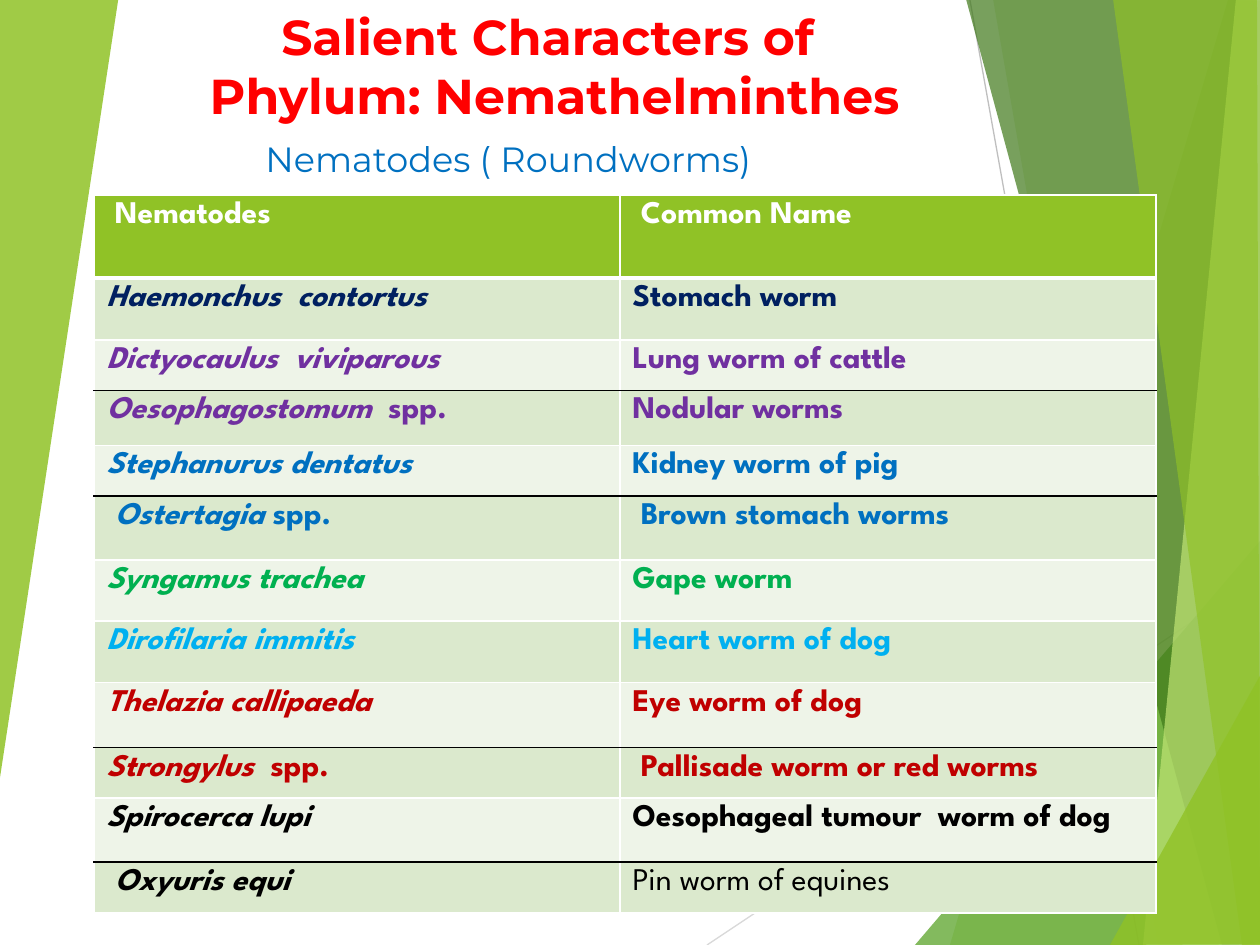
from lxml import etree
from pptx import Presentation
from pptx.dml.color import RGBColor
from pptx.enum.shapes import MSO_CONNECTOR
from pptx.enum.text import MSO_ANCHOR, MSO_AUTO_SIZE, PP_ALIGN
from pptx.oxml.ns import qn
from pptx.util import Emu, Pt

STRAIGHT = MSO_CONNECTOR.STRAIGHT
TOP, MIDDLE = MSO_ANCHOR.TOP, MSO_ANCHOR.MIDDLE
GROW = MSO_AUTO_SIZE.SHAPE_TO_FIT_TEXT
LEFT, CENTER = PP_ALIGN.LEFT, PP_ALIGN.CENTER

PX = 914400 / 126
WIDTH, HEIGHT = 1260, 945
HEADING_FONT, TABLE_FONT = "Montserrat", "League Spartan"

WHITE = RGBColor(0xFF, 0xFF, 0xFF)
BLACK = RGBColor(0x00, 0x00, 0x00)
RED = RGBColor(0xFF, 0x00, 0x00)
DARK_RED = RGBColor(0xC0, 0x00, 0x00)
NAVY = RGBColor(0x00, 0x20, 0x60)
PURPLE = RGBColor(0x70, 0x30, 0xA0)
BLUE = RGBColor(0x00, 0x70, 0xC0)
SKY = RGBColor(0x00, 0xB0, 0xF0)
GREEN = RGBColor(0x00, 0xB0, 0x50)
LIME = RGBColor(0x90, 0xC2, 0x26)
LEAF = RGBColor(0x54, 0xA0, 0x21)
FOREST = RGBColor(0x3F, 0x78, 0x19)
PALE_LIME = RGBColor(0xC0, 0xE4, 0x74)
BAND_DARK = RGBColor(0xDB, 0xE9, 0xCD)
BAND_LIGHT = RGBColor(0xEE, 0xF4, 0xE8)
LIGHT_GREY = RGBColor(0xD9, 0xD9, 0xD9)
GREY = RGBColor(0xBF, 0xBF, 0xBF)

LINES = [
    ((707, 945), (1261, 576), LIGHT_GREY),
    ((970, 0), (1139, 945), GREY),
]

FACETS = [
    ([(1228, 0), (950, 945), (1262, 946), (1261, 1)], LIME, 30),
    ([(993, -1), (1158, 945), (1261, 945), (1261, -1)], LIME, 20),
    ([(915, 945), (1260, 541), (1261, 945)], LEAF, 72),
    ([(966, -1), (1222, 945), (1261, 944), (1261, -1)], FOREST, 70),
    ([(1236, -1), (1143, 945), (1261, 945), (1260, -1)], PALE_LIME, 70),
    ([(1113, -1), (1242, 945), (1260, 945), (1257, -1)], LIME, 65),
    ([(1110, 945), (1261, 674), (1261, 944)], LIME, 80),
    ([(-1, 0), (118, -1), (118, 1), (-1, 784)], LIME, 85),
]

COLUMNS = [526, 536]
HEADER = (" Nematodes", "", " Common Name", WHITE, 83)
WORMS = [
    ("Haemonchus  contortus", "", "Stomach worm", NAVY, 62),
    ("Dictyocaulus  viviparous", "", "Lung worm of cattle", PURPLE, 50),
    ("Oesophagostomum  ", "spp.", "Nodular worms", PURPLE, 55),
    ("Stephanurus dentatus", "", "Kidney worm of pig", BLUE, 50),
    (" Ostertagia ", "spp.", " Brown stomach worms", BLUE, 64),
    ("Syngamus trachea", "", "Gape worm", GREEN, 61),
    ("Dirofilaria immitis", "", "Heart worm of dog", SKY, 62),
    ("Thelazia callipaeda", "", "Eye worm of dog", DARK_RED, 65),
    ("Strongylus  ", "spp.", " Pallisade worm or red worms", DARK_RED, 50),
    ("Spirocerca lupi", "", "Oesophageal tumour  worm of dog", BLACK, 64),
    (" Oxyuris equi", "", "Pin worm of equines", BLACK, 51),
]
RULED_ROWS = {2, 4, 8, 10}


def px(n):
    """Turn pixels into EMU."""
    return Emu(round(n * PX))


def write(p, text, *, font, size, color, bold=False, italic=False, align=LEFT):
    """Add one formatted run to a paragraph."""
    p.alignment = align
    r = p.add_run()
    r.text = text
    r.font.name = font
    r.font.size = Pt(size)
    r.font.color.rgb = color
    r.font.bold = bold
    r.font.italic = italic


class Deck:
    """Hold the style and the current slide."""

    def __init__(self, prs):
        """Start a title-only slide."""
        self.slide = prs.slides.add_slide(prs.slide_layouts[5])
        self.shapes = self.slide.shapes

    def line(self, start, end, color):
        """Draw a thin straight line."""
        c = self.shapes.add_connector(STRAIGHT, *map(px, start + end))
        c.line.color.rgb = color
        c.line.width = Pt(0.75)
        etree.SubElement(c._element.spPr, qn("a:effectLst"))

    def facet(self, points, color, opacity):
        """Draw a translucent polygon."""
        builder = self.shapes.build_freeform(*points[0], scale=PX)
        builder.add_line_segments(points[1:], close=True)
        sp = builder.convert_to_shape()
        sp.shadow.inherit = False
        sp.line.fill.background()
        sp.fill.solid()
        sp.fill.fore_color.rgb = color
        rgb = sp._element.spPr.find(".//" + qn("a:srgbClr"))
        etree.SubElement(rgb, qn("a:alpha"), val=str(opacity * 1000))

    def title(self, lines, x, y, w, h):
        """Place and fill the title in front of the background."""
        sp = self.shapes.title
        sp.left, sp.top, sp.width, sp.height = map(px, (x, y, w, h))
        tf = sp.text_frame
        tf.word_wrap = True
        tf.auto_size = GROW
        tf.vertical_anchor = MIDDLE
        for i, text in enumerate(lines):
            p = tf.add_paragraph() if i else tf.paragraphs[0]
            write(p, text, font=HEADING_FONT, size=28, color=RED, bold=True, align=CENTER)
        sp._element.getparent().append(sp._element)

    def text(self, text, x, y, w, h, **style):
        """Add a wrapped text box."""
        tf = self.shapes.add_textbox(*map(px, (x, y, w, h))).text_frame
        tf.word_wrap = True
        tf.vertical_anchor = TOP
        write(tf.paragraphs[0], text, **style)

    def border(self, cell, side, color, width):
        """Draw one side of a cell."""
        ln = etree.SubElement(cell._tc.get_or_add_tcPr(), qn(f"a:ln{side}"), w=str(Pt(width)))
        fill = etree.SubElement(ln, qn("a:solidFill"))
        etree.SubElement(fill, qn("a:srgbClr"), val=str(color))

    def cell(self, cell, runs, fill, above, below, color):
        """Fill, frame and write one cell."""
        for side, edge in (("L", (WHITE, 1)), ("R", (WHITE, 1)), ("T", above), ("B", below)):
            self.border(cell, side, *edge)
        cell.fill.solid()
        cell.fill.fore_color.rgb = fill
        for text, bold, italic in runs:
            write(cell.text_frame.paragraphs[0], text, font=TABLE_FONT, size=18,
                  color=color, bold=bold, italic=italic)

    def table(self, rows, x, y):
        """Add the table of worms and their common names."""
        size = sum(COLUMNS), sum(row[-1] for row in rows)
        table = self.shapes.add_table(len(rows), len(COLUMNS), *map(px, (x, y, *size))).table
        for column, width in zip(table.columns, COLUMNS):
            column.width = px(width)
        above = (WHITE, 1)
        for i, (name, suffix, common, color, height) in enumerate(rows):
            table.rows[i].height = px(height)
            fill = (BAND_DARK if i % 2 else BAND_LIGHT) if i else LIME
            below = (BLACK if i in RULED_ROWS else WHITE, 1 if i else 3)
            names = [(name, True, i > 0)]
            if suffix:
                names.append((suffix, True, False))
            commons = [(common, i < len(rows) - 1, False)]
            for j, runs in enumerate((names, commons)):
                self.cell(table.cell(i, j), runs, fill, above, below, color)
            above = below


def main():
    """Build and save the slide."""
    prs = Presentation()
    prs.slide_width, prs.slide_height = px(WIDTH), px(HEIGHT)
    deck = Deck(prs)
    for line in LINES:
        deck.line(*line)
    for facet in FACETS:
        deck.facet(*facet)
    deck.text("Nematodes ( Roundworms)", 253, 131, 863, 770,
              font=HEADING_FONT, size=20, color=BLUE)
    deck.title(["Salient Characters of ", "Phylum: Nemathelminthes"], 123, 0, 863, 131)
    deck.table([HEADER] + WORMS, 94, 195)
    prs.save("out.pptx")


if __name__ == "__main__":
    main()
